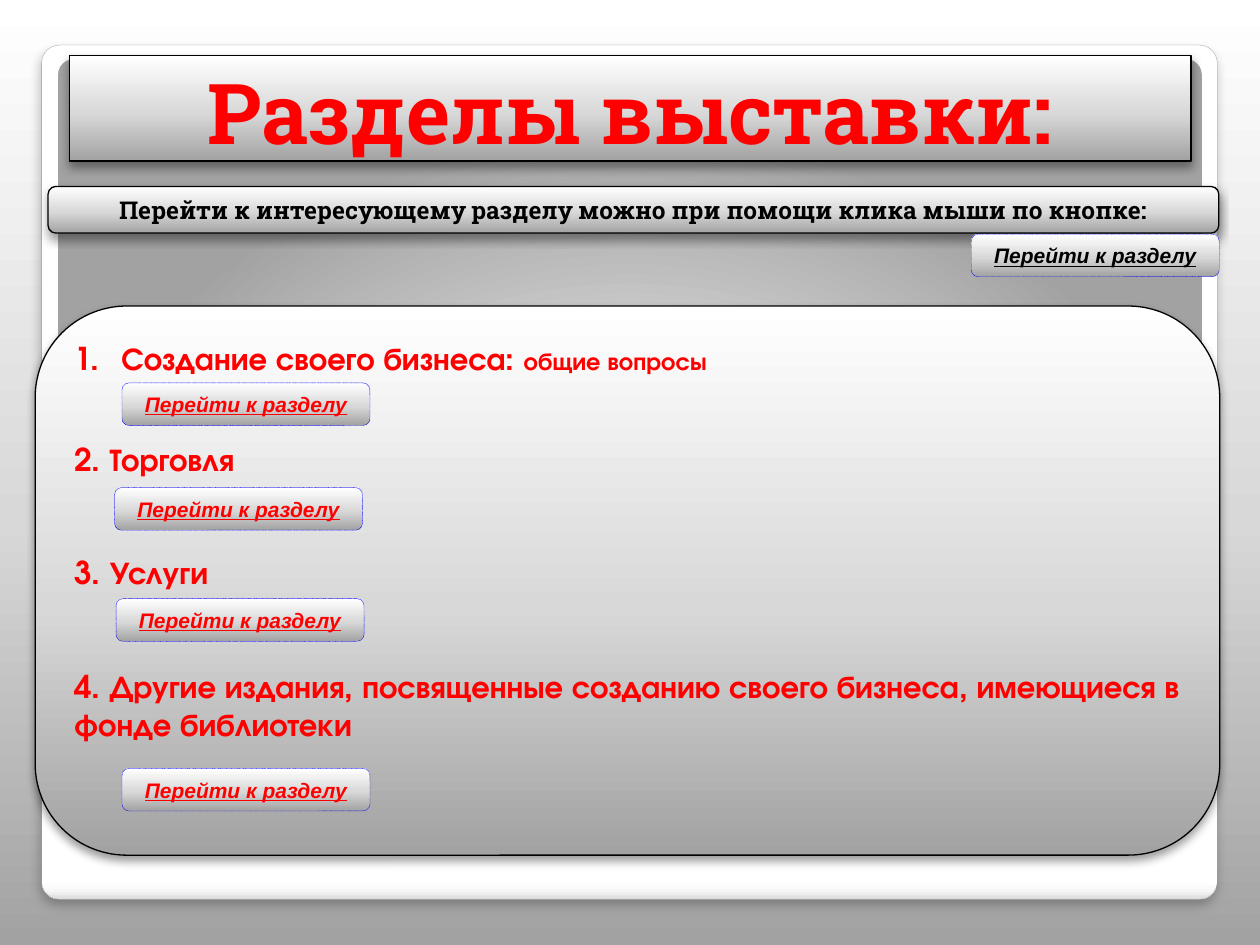
from lxml.etree import SubElement
from pptx import Presentation
from pptx.dml.color import RGBColor
from pptx.enum.dml import MSO_LINE
from pptx.enum.shapes import MSO_SHAPE
from pptx.enum.text import MSO_ANCHOR, PP_ALIGN
from pptx.oxml.ns import qn
from pptx.util import Cm, Pt

TITLE = "Разделы выставки:"
HINT = "Перейти к интересующему разделу можно при помощи клика мыши по кнопке:"
BUTTON = "Перейти к разделу"
# space before in points, then runs of (wording, size)
SECTIONS = [
    (0, [("Создание своего бизнеса: ", 18), ("общие вопросы", 14)]),
    (36, [("2. Торговля", 18)]),
    (43.3, [("3. Услуги", 18)]),
    (43.3, [("4. Другие издания, посвященные созданию своего бизнеса, "
             "имеющиеся в фонде библиотеки", 18)]),
]
RED, BLACK, BLUE = "FF0000", "000000", "0000FF"
# left, top, text colour
BUTTONS = [
    (2.46, 7.72, RED),
    (2.31, 9.83, RED),
    (2.34, 12.07, RED),
    (2.46, 15.49, RED),
    (19.58, 4.72, BLACK),
]
BUTTON_SIZE = (5, 0.86)

SILVER = [(0, "A2A2A2"), (45, "D8D8D8"), (100, "FFFFFF")]
FRAME_STOPS = [(0, "FFFFFF"), (98, "FFFFFF"), (99, "F7F7F7"), (100, "DADADA")]
GLOW_STOPS = [(0, "FFFFFF"), (55, "E1E1E1"), (100, "A2A2A2")]
GLOW_CENTRE = {"l": 50, "t": 175, "r": 50, "b": -75}

# opacity %, blur pt, distance pt
SOFT_SHADOW = (25, 6, 4)
CARD_SHADOW = (40, 5.2, 3)

TITLE_FONT = {"name": "Roboto Slab", "size": Pt(48), "bold": True}
HINT_FONT = {"name": "Roboto Slab", "size": Pt(14), "bold": True}
SECTION_FONT = {"name": "TeX Gyre Adventor", "bold": True}
BUTTON_FONT = {"name": "Arial", "size": Pt(12), "bold": True,
               "italic": True, "underline": True}
CENTRED = {"word_wrap": True, "vertical_anchor": MSO_ANCHOR.MIDDLE}


def rgb(colour):
    return RGBColor.from_string(colour)


def add_gradient(fill, parent, stops, angle=270, centre=None):
    """Swap the fill in parent for a linear gradient, or a round one."""
    fill.solid()
    solid = parent.find(qn("a:solidFill"))
    gradient = parent.makeelement(qn("a:gradFill"), {"rotWithShape": "1"})
    stop_list = SubElement(gradient, qn("a:gsLst"))
    for position, colour in stops:
        stop = SubElement(stop_list, qn("a:gs"), pos=str(position * 1000))
        SubElement(stop, qn("a:srgbClr"), val=colour)
    if centre:
        path = SubElement(gradient, qn("a:path"), {"path": "circle"})
        SubElement(path, qn("a:fillToRect"),
                   {side: str(share * 1000) for side, share in centre.items()})
    else:
        SubElement(gradient, qn("a:lin"), ang=str(angle * 60000), scaled="0")
    parent.replace(solid, gradient)


def add_shadow(shape, opacity, blur, distance):
    effects = shape._element.spPr.find(qn("a:effectLst"))
    shadow = SubElement(effects, qn("a:outerShdw"), blurRad=str(Pt(blur)),
                        dist=str(Pt(distance)), dir="5400000", rotWithShape="0")
    tint = SubElement(shadow, qn("a:srgbClr"), val=BLACK)
    SubElement(tint, qn("a:alpha"), val=str(opacity * 1000))


def add_card(slide, box, stops=SILVER, outline=(BLACK, 0.75), shadow=None,
             kind=MSO_SHAPE.ROUNDED_RECTANGLE, corner=None, **gradient):
    card = slide.shapes.add_shape(kind, *map(Cm, box))
    if corner is not None:
        card.adjustments[0] = corner
    add_gradient(card.fill, card._element.spPr, stops, **gradient)
    if outline:
        colour, width = outline
        card.line.color.rgb = rgb(colour)
        card.line.width = Pt(width)
    else:
        card.line.fill.background()
    card.shadow.inherit = False
    if shadow:
        add_shadow(card, *shadow)
    return card


def apply(target, formats):
    for attribute, value in formats.items():
        setattr(target, attribute, value)


def add_run(paragraph, wording, font, colour):
    run = paragraph.add_run()
    run.text = wording
    apply(run.font, font)
    run.font.color.rgb = rgb(colour)


def add_label(card, wording, font, colour, **frame):
    apply(card.text_frame, {**CENTRED, **frame})
    paragraph = card.text_frame.paragraphs[0]
    paragraph.alignment = PP_ALIGN.CENTER
    add_run(paragraph, wording, font, colour)


def add_sections(card):
    frame = card.text_frame
    apply(frame, {"word_wrap": True, "vertical_anchor": MSO_ANCHOR.TOP})
    for index, (space, runs) in enumerate(SECTIONS):
        paragraph = frame.add_paragraph() if index else frame.paragraphs[0]
        paragraph.alignment = PP_ALIGN.LEFT
        if index:
            paragraph.space_before = Pt(space)
        else:
            properties = paragraph._p.get_or_add_pPr()
            properties.set("marL", str(Cm(0.95)))
            properties.set("indent", str(Cm(-0.95)))
            number_colour = SubElement(properties, qn("a:buClr"))
            SubElement(number_colour, qn("a:srgbClr"), val=RED)
            SubElement(properties, qn("a:buFont"), typeface=SECTION_FONT["name"])
            SubElement(properties, qn("a:buAutoNum"), type="arabicPeriod")
        for wording, size in runs:
            add_run(paragraph, wording, {**SECTION_FONT, "size": Pt(size)}, RED)


def main():
    deck = Presentation()
    deck.slide_width, deck.slide_height = Cm(25.4), Cm(19.05)
    slide = deck.slides.add_slide(deck.slide_layouts[6])
    backdrop = slide.background.fill
    backdrop.solid()
    add_gradient(backdrop, slide._element.find(".//" + qn("p:bgPr")), SILVER)

    add_card(slide, (0.84, 0.91, 23.7, 17.22), FRAME_STOPS, ("A4A4A4", 0.16),
             SOFT_SHADOW, corner=0.021, angle=90)
    add_card(slide, (1.17, 1.19, 23.06, 15.24), GLOW_STOPS, None,
             corner=0.021, centre=GLOW_CENTRE)

    heading = add_card(slide, (1.4, 1.12, 22.61, 2.13), shadow=CARD_SHADOW,
                       kind=MSO_SHAPE.RECTANGLE)
    add_label(heading, TITLE, TITLE_FONT, RED, margin_top=0, margin_bottom=0,
              vertical_anchor=MSO_ANCHOR.BOTTOM)

    add_sections(add_card(slide, (0.71, 6.17, 23.88, 11.07), shadow=CARD_SHADOW))

    hint = add_card(slide, (0.97, 3.76, 23.6, 0.94), shadow=CARD_SHADOW)
    add_label(hint, HINT, HINT_FONT, BLACK)

    for left, top, colour in BUTTONS:
        button = add_card(slide, (left, top, *BUTTON_SIZE), outline=(BLUE, 0.25))
        button.line.dash_style = MSO_LINE.ROUND_DOT
        add_label(button, BUTTON, BUTTON_FONT, colour)

    deck.save("out.pptx")


if __name__ == "__main__":
    main()
